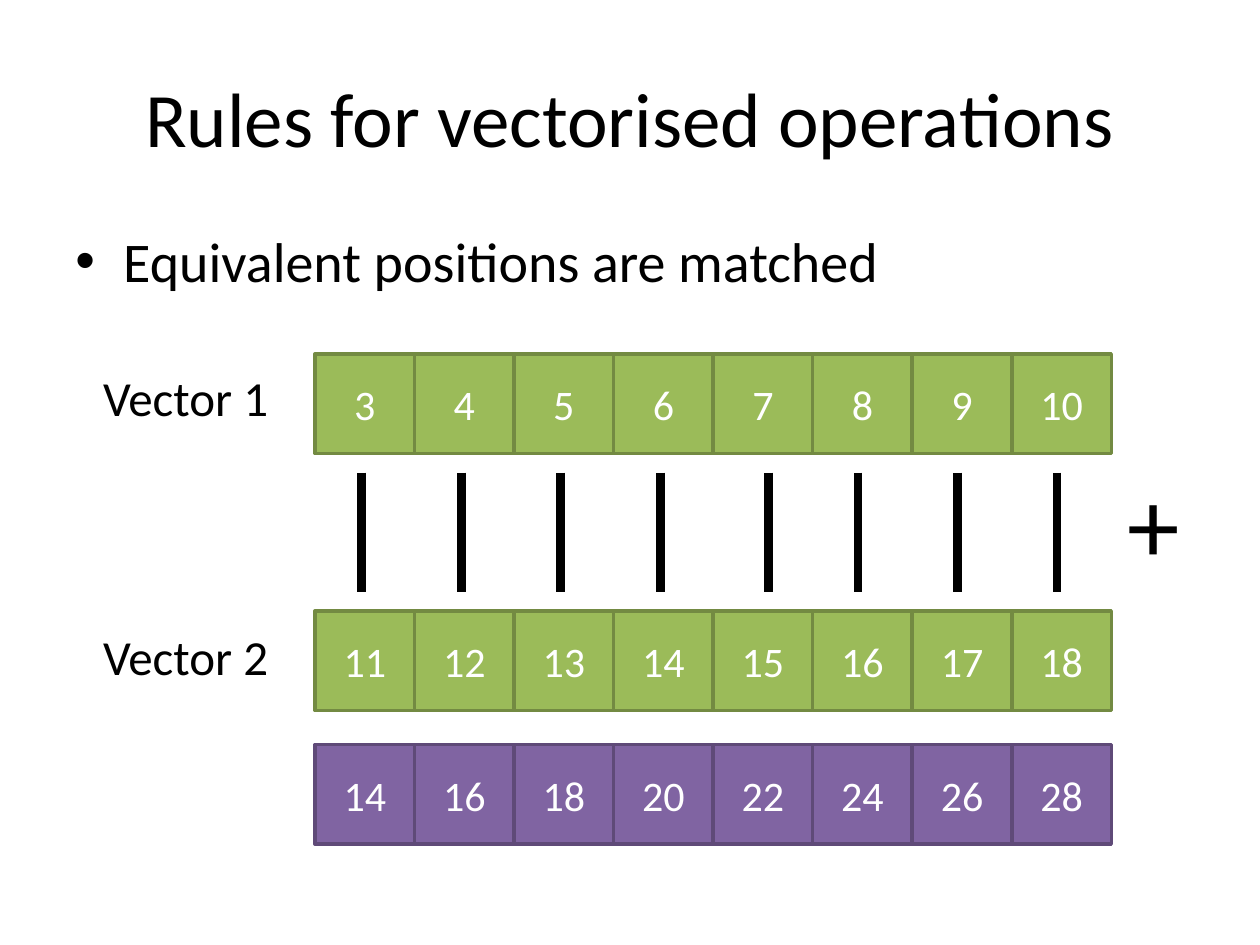
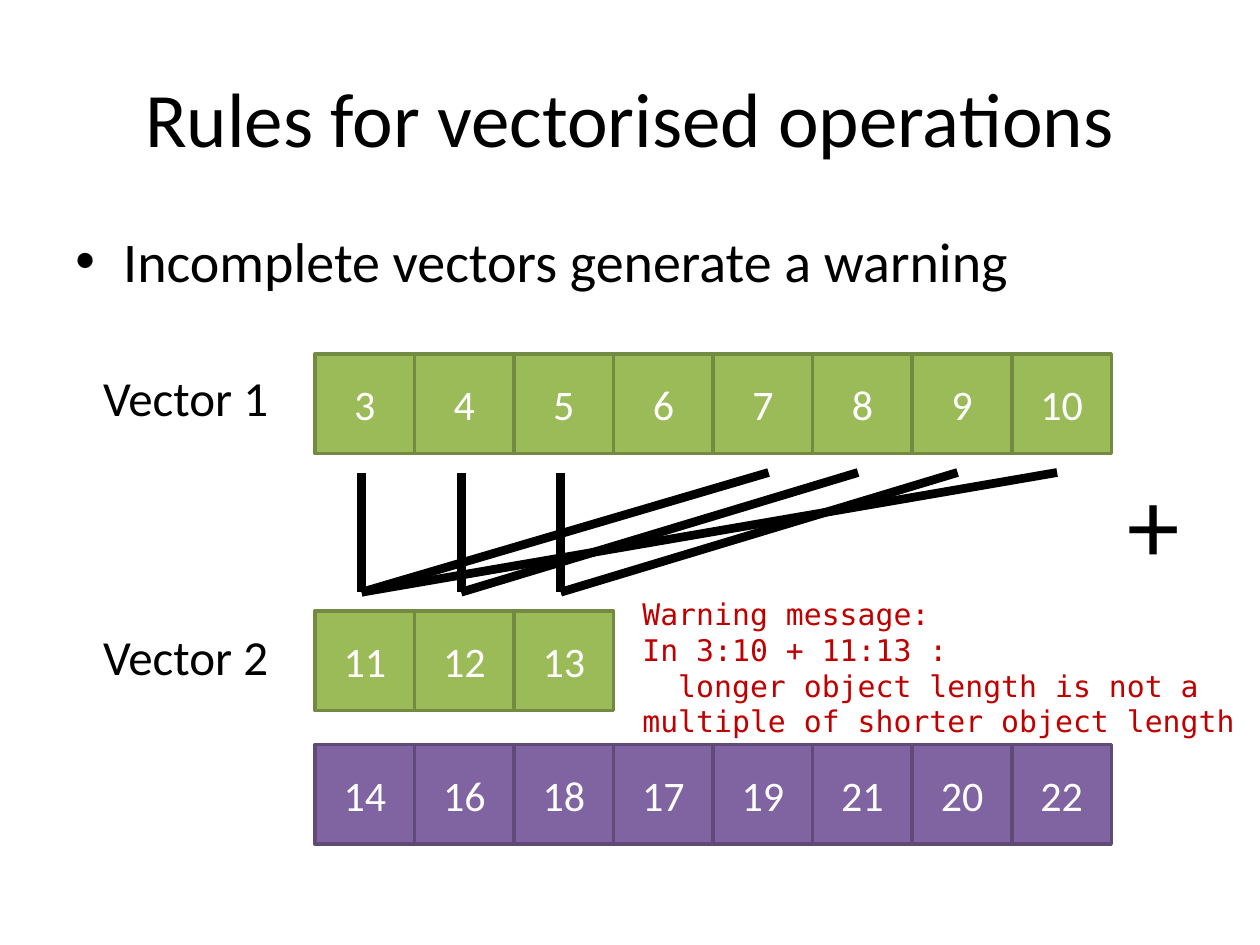
from itertools import cycle

from lxml import etree
from pptx import Presentation
from pptx.dml.color import RGBColor
from pptx.enum.shapes import MSO_CONNECTOR, MSO_SHAPE
from pptx.enum.text import MSO_ANCHOR, PP_ALIGN
from pptx.oxml.ns import qn
from pptx.util import Inches, Pt

BLACK = RGBColor(0x00, 0x00, 0x00)
WHITE = RGBColor(0xFF, 0xFF, 0xFF)
RED = RGBColor(0xC0, 0x00, 0x00)
GREEN = RGBColor(0x9B, 0xBB, 0x59)
DARK_GREEN = RGBColor(0x73, 0x8A, 0x42)
PURPLE = RGBColor(0x80, 0x64, 0xA2)
DARK_PURPLE = RGBColor(0x5F, 0x4A, 0x78)

TEXT_FONT = "Calibri"
CODE_FONT = "DejaVu Sans Mono"

CELL = 0.79
CELLS_LEFT = 2.5
VECTOR_1_TOP, VECTOR_2_TOP, RESULT_TOP = 2.81, 4.85, 5.91
LINK_TOP, LINK_BOTTOM = 3.75, 4.7
LINK_CENTRES = [2.87, 3.66, 4.45, 5.24, 6.1, 6.81, 7.6, 8.39]

VECTOR_1 = range(3, 11)
WARNING = [
    "Warning message:",
    "In 3:10 + 11:13 :",
    "  longer object length is not a multiple of shorter object length",
]


class VectorDeck:
    """Holds the presentation, its style and the slide being drawn."""

    def __init__(self):
        self.presentation = Presentation()
        self.presentation.slide_width = Inches(10)
        self.presentation.slide_height = Inches(7.5)
        self.slide = None

    def add_slide(self, title, point):
        self.slide = self.presentation.slides.add_slide(self.presentation.slide_layouts[6])
        title_frame = self.text([title], 0.5, 0.3, 9, 1.25, 44)
        title_frame.vertical_anchor = MSO_ANCHOR.MIDDLE
        title_frame.paragraphs[0].alignment = PP_ALIGN.CENTER
        self.bullet(point)

    def style(self, paragraph, size, color, font=TEXT_FONT):
        paragraph.font.size = Pt(size)
        paragraph.font.name = font
        paragraph.font.color.rgb = color

    def text(self, lines, left, top, width, height, size,
             color=BLACK, font=TEXT_FONT, wrap=True):
        box = self.slide.shapes.add_textbox(
            Inches(left), Inches(top), Inches(width), Inches(height))
        frame = box.text_frame
        frame.word_wrap = wrap
        frame.text = "\n".join(lines)
        for paragraph in frame.paragraphs:
            self.style(paragraph, size, color, font)
        return frame

    def bullet(self, point):
        frame = self.text([point], 0.5, 1.75, 9, 4.95, 32)
        properties = frame.paragraphs[0]._p.get_or_add_pPr()
        properties.set("marL", str(Inches(0.38)))
        properties.set("indent", str(-Inches(0.38)))
        bullet_font = etree.Element(qn("a:buFont"), typeface="Arial")
        bullet_mark = etree.Element(qn("a:buChar"), char="•")
        properties.insert(0, bullet_font)
        properties.insert(1, bullet_mark)

    def vector(self, values, top, fill=GREEN, line=DARK_GREEN):
        """Draws the values as a row of touching square cells."""
        for column, value in enumerate(values):
            cell = self.slide.shapes.add_shape(
                MSO_SHAPE.RECTANGLE, Inches(CELLS_LEFT + column * CELL), Inches(top),
                Inches(CELL), Inches(CELL))
            cell.shadow.inherit = False
            cell.fill.solid()
            cell.fill.fore_color.rgb = fill
            cell.line.color.rgb = line
            cell.line.width = Pt(2)
            frame = cell.text_frame
            frame.text = str(value)
            frame.vertical_anchor = MSO_ANCHOR.MIDDLE
            frame.paragraphs[0].alignment = PP_ALIGN.CENTER
            self.style(frame.paragraphs[0], 24, WHITE)

    def link(self, upper, lower):
        """Joins a column of vector 1 to a column of vector 2."""
        connector = self.slide.shapes.add_connector(
            MSO_CONNECTOR.STRAIGHT,
            Inches(LINK_CENTRES[upper]), Inches(LINK_TOP),
            Inches(LINK_CENTRES[lower]), Inches(LINK_BOTTOM))
        connector.line.color.rgb = BLACK
        connector.line.width = Pt(5)
        etree.SubElement(connector._element.spPr, qn("a:effectLst"))

    def addition(self, vector_2, links):
        """Draws vector 1 plus vector 2, recycling vector 2 when it is shorter."""
        self.vector(VECTOR_1, VECTOR_1_TOP)
        self.vector(vector_2, VECTOR_2_TOP)
        self.text(["Vector 1"], 0.72, 2.87, 1.53, 0.57, 28, wrap=False)
        self.text(["Vector 2"], 0.72, 4.92, 1.53, 0.57, 28, wrap=False)
        self.text(["+"], 8.85, 3.59, 0.62, 1.11, 60, wrap=False)
        for upper, lower in links:
            self.link(upper, lower)
        sums = [first + second for first, second in zip(VECTOR_1, cycle(vector_2))]
        self.vector(sums, RESULT_TOP, PURPLE, DARK_PURPLE)


def main():
    deck = VectorDeck()
    title = "Rules for vectorised operations"

    deck.add_slide(title, "Equivalent positions are matched")
    deck.addition(range(11, 19), [(column, column) for column in range(8)])

    deck.add_slide(title, "Incomplete vectors generate a warning")
    deck.addition(range(11, 14),
                  [(0, 0), (1, 1), (2, 2), (4, 0), (5, 1), (6, 2), (7, 0)])
    deck.text(WARNING, 5, 4.68, 5, 1.25, 17, RED, CODE_FONT)

    deck.presentation.save("out.pptx")


if __name__ == "__main__":
    main()
